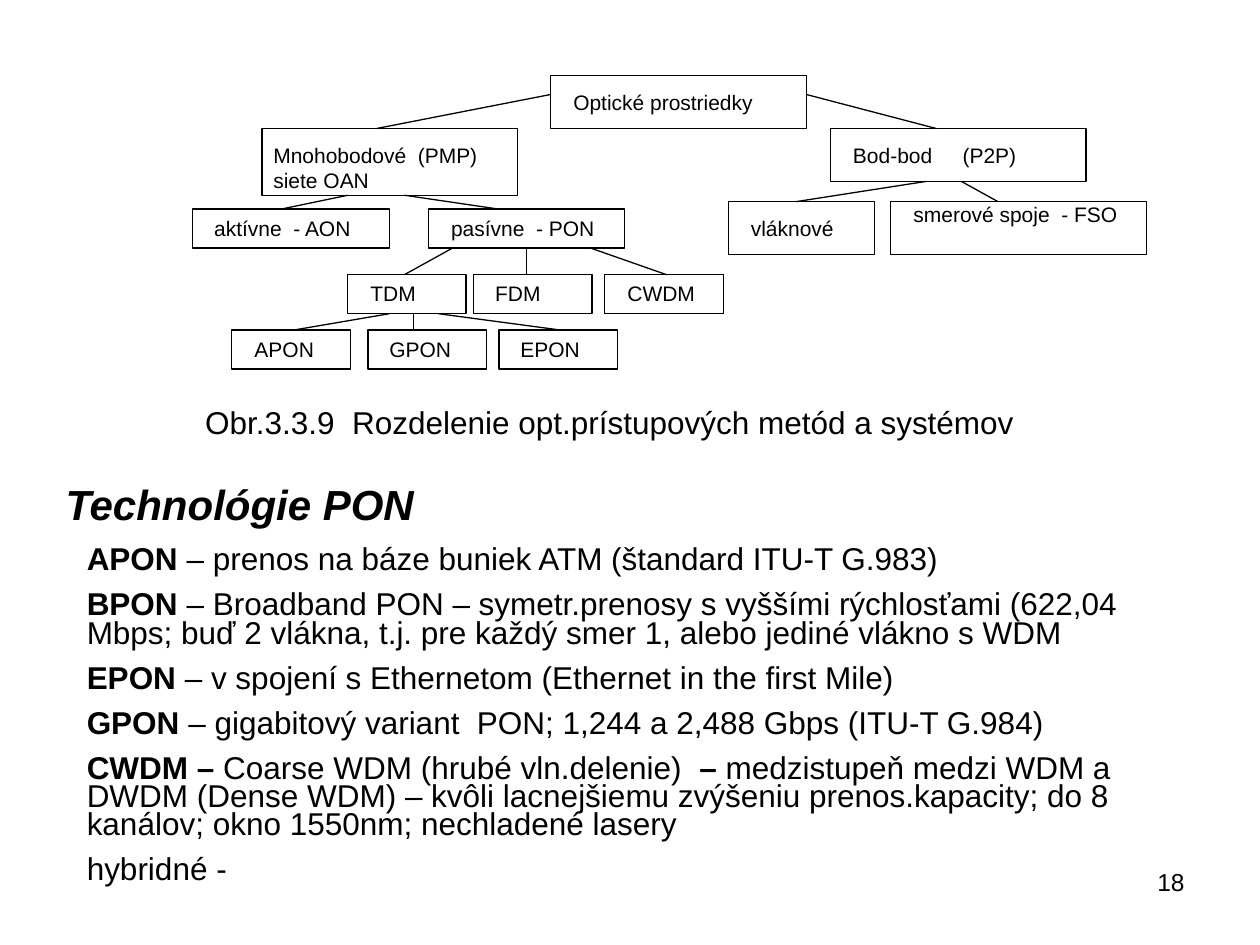
from lxml import etree
from pptx import Presentation
from pptx.dml.color import RGBColor
from pptx.enum.shapes import MSO_CONNECTOR, MSO_SHAPE
from pptx.enum.text import MSO_ANCHOR, MSO_AUTO_SIZE, PP_ALIGN
from pptx.oxml.ns import qn
from pptx.util import Inches, Pt

BLACK = "000000"
FONT = "Arial"

# name: (text, left, top, width, height, left inset, top inset)
NODES = {
    "root": ("Optické prostriedky", 2.84, 0, 2.03, 0.42, 0.18, 0.11),
    "pmp": ("Mnohobodové  (PMP)\nsiete OAN", 0.55, 0.42, 2.03, 0.53, 0.09, 0.11),
    "p2p": ("Bod-bod\t(P2P)", 5.06, 0.42, 2.03, 0.42, 0.18, 0.11),
    "aon": ("aktívne  - AON", 0, 1.06, 1.56, 0.31, 0.17, 0.05),
    "pon": ("pasívne  - PON", 1.87, 1.06, 1.56, 0.31, 0.18, 0.05),
    "fibre": ("vláknové", 4.25, 1, 1.16, 0.42, 0.18, 0.11),
    "fso": ("smerové spoje  - FSO", 5.54, 1, 2.03, 0.42, 0.18, 0),
    "tdm": ("TDM", 1.23, 1.58, 0.94, 0.31, 0.18, 0.05),
    "fdm": ("FDM", 2.23, 1.58, 0.94, 0.31, 0.17, 0.05),
    "cwdm": ("CWDM", 3.27, 1.58, 0.94, 0.31, 0.18, 0.05),
    "apon": ("APON", 0.31, 2.02, 0.94, 0.31, 0.18, 0.05),
    "gpon": ("GPON", 1.39, 2.02, 0.94, 0.31, 0.17, 0.05),
    "epon": ("EPON", 2.43, 2.02, 0.94, 0.31, 0.17, 0.05),
}

# parent, child, x at the parent, x at the child
EDGES = [
    ("root", "pmp", 2.84, 1.46), ("root", "p2p", 4.87, 5.9),
    ("pmp", "aon", 1.23, 0.7), ("pmp", "pon", 1.68, 2.43),
    ("pon", "tdm", 2.06, 1.68), ("pon", "fdm", 2.65, 2.65),
    ("pon", "cwdm", 3.16, 3.76),
    ("tdm", "apon", 1.56, 0.8), ("tdm", "gpon", 1.75, 1.75),
    ("tdm", "epon", 1.95, 2.92),
    ("p2p", "fibre", 5.82, 4.79), ("p2p", "fso", 6.1, 6.39),
]
ROOT_EDGE_Y = 0.15

# Each paragraph is a list of (text, bold)
TECHNOLOGIES = [
    [("APON", True), (" – prenos na báze buniek ATM (štandard ITU-T G.983)", False)],
    [("BPON", True), (" – Broadband PON – symetr.prenosy s vyššími rýchlosťami "
                      "(622,04 Mbps; buď 2 vlákna, t.j. pre každý smer 1, "
                      "alebo jediné vlákno s WDM", False)],
    [("EPON", True), (" – v spojení s Ethernetom (Ethernet in the first Mile)", False)],
    [("GPON", True), (" – gigabitový variant  PON; 1,244 a 2,488 Gbps (ITU-T G.984)",
                      False)],
    [("CWDM – ", True), ("Coarse WDM (hrubé vln.delenie) ", False), (" – ", True),
     ("medzistupeň medzi WDM a DWDM (Dense WDM) – kvôli lacnejšiemu zvýšeniu "
      "prenos.kapacity; do 8 kanálov; okno 1550nm; nechladené lasery", False)],
    [("hybridné -", False)],
]


def color(value):
    return RGBColor.from_string(value)


def style(p, size, align=PP_ALIGN.LEFT):
    p.alignment = align
    p.font.name = FONT
    p.font.size = Pt(size)
    p.font.color.rgb = color(BLACK)


def add_tab(p, pos):
    tabs = etree.SubElement(p._p.get_or_add_pPr(), qn("a:tabLst"))
    etree.SubElement(tabs, qn("a:tab"), pos=str(Inches(pos)), algn="l")


def add_node(slide, x, y, node):
    text, left, top, width, height, inset_x, inset_y = node
    s = slide.shapes.add_shape(MSO_SHAPE.RECTANGLE, Inches(x + left), Inches(y + top),
                               Inches(width), Inches(height))
    s.shadow.inherit = False
    s.fill.background()
    s.line.color.rgb = color(BLACK)
    s.line.width = Pt(0.75)
    tf = s.text_frame
    tf.word_wrap = True
    tf.vertical_anchor = MSO_ANCHOR.TOP
    tf.margin_left, tf.margin_top = Inches(inset_x), Inches(inset_y)
    tf.margin_right = tf.margin_bottom = 0
    tf.text = text
    for p in tf.paragraphs:
        if "\t" in text:
            add_tab(p, 0.87)
        style(p, 12)


def add_edge(slide, x1, y1, x2, y2):
    c = slide.shapes.add_connector(MSO_CONNECTOR.STRAIGHT, Inches(x1), Inches(y1),
                                   Inches(x2), Inches(y2))
    c.line.color.rgb = color(BLACK)
    c.line.width = Pt(0.75)
    etree.SubElement(c._element.spPr, qn("a:effectLst"))


def add_tree(slide, x, y):
    for node in NODES.values():
        add_node(slide, x, y, node)
    for parent, child, x1, x2 in EDGES:
        _, _, top, _, height, _, _ = NODES[parent]
        # The root's edges leave from its sides, all others from the bottom
        y1 = ROOT_EDGE_Y if parent == "root" else top + height
        add_edge(slide, x + x1, y + y1, x + x2, y + NODES[child][2])


def add_text(slide, x, y, w, h, text, size, align=PP_ALIGN.LEFT):
    tf = slide.shapes.add_textbox(Inches(x), Inches(y), Inches(w), Inches(h)).text_frame
    tf.word_wrap = True
    tf.text = text
    style(tf.paragraphs[0], size, align)


def add_title(slide, x, y, w, h):
    s = slide.shapes.title
    s.left, s.top, s.width, s.height = Inches(x), Inches(y), Inches(w), Inches(h)
    tf = s.text_frame
    tf.text = "Technológie PON"
    tf.auto_size = MSO_AUTO_SIZE.NONE
    tf.vertical_anchor = MSO_ANCHOR.TOP
    tf.margin_left = Inches(0.17)
    p = tf.paragraphs[0]
    style(p, 24)
    p.font.bold = p.font.italic = True


def add_technologies(slide, x, y, w, h):
    tf = slide.shapes.add_textbox(Inches(x), Inches(y), Inches(w), Inches(h)).text_frame
    tf.word_wrap = True
    for i, runs in enumerate(TECHNOLOGIES):
        p = tf.add_paragraph() if i else tf.paragraphs[0]
        p.line_spacing = 0.75
        if i:
            p.space_before = Pt(9.5)
        style(p, 18)
        for text, bold in runs:
            r = p.add_run()
            r.text = text
            r.font.bold = bold


def main():
    prs = Presentation()
    prs.slide_width, prs.slide_height = Inches(10), Inches(7.5)
    slide = prs.slides.add_slide(prs.slide_layouts[5])
    # Classification tree with its caption
    add_tree(slide, 1.53, 0.6)
    add_text(slide, 1.53, 3.15, 7.09, 0.4,
             "Obr.3.3.9  Rozdelenie opt.prístupových metód a systémov", 18)
    # Heading and list of technologies
    add_title(slide, 0.35, 3.75, 3.7, 0.5)
    add_technologies(slide, 0.59, 4.3, 8.82, 2.89)
    # Page number
    add_text(slide, 7.17, 6.83, 2.33, 0.52, "18", 14, PP_ALIGN.RIGHT)
    prs.save("out.pptx")


if __name__ == "__main__":
    main()
